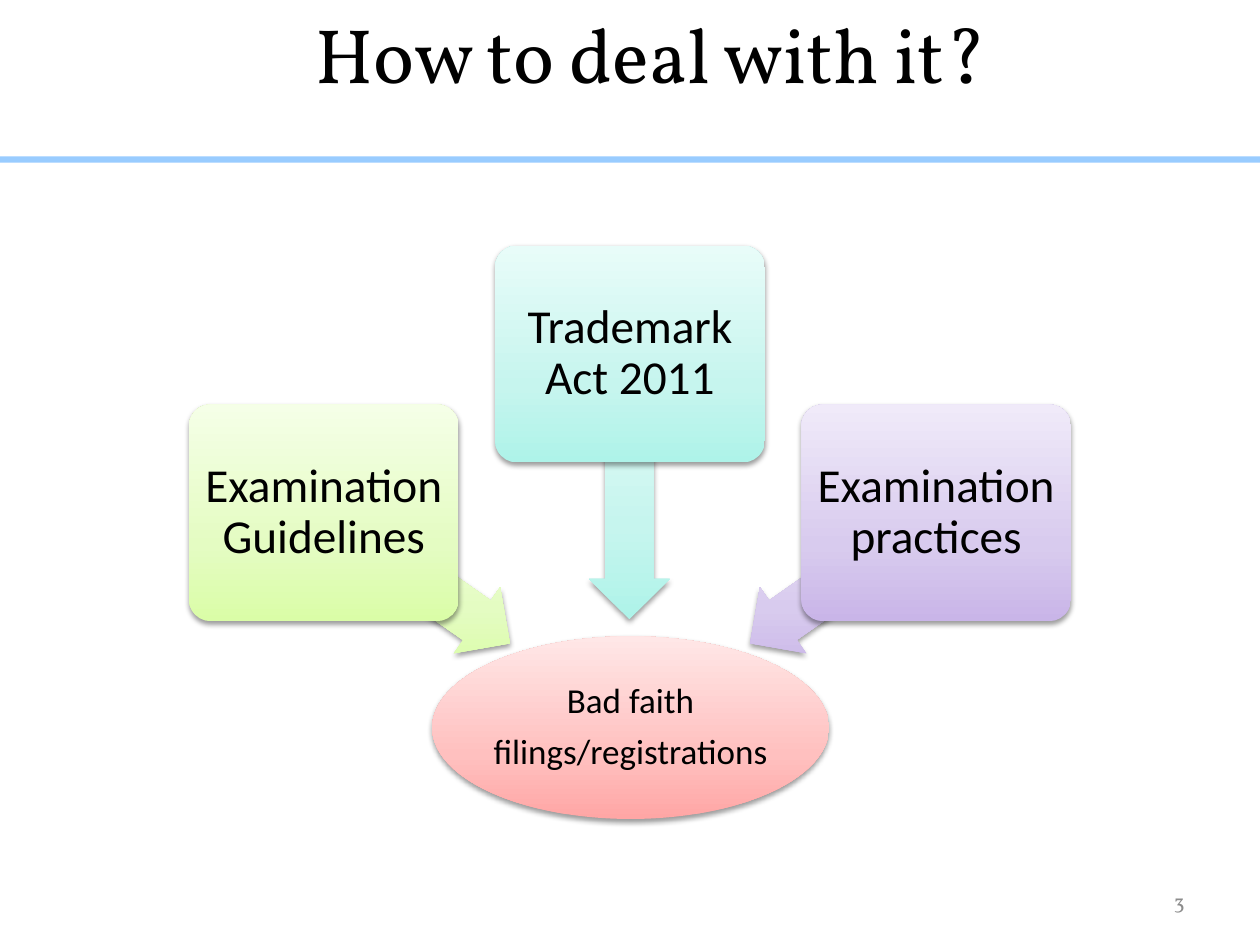
from dataclasses import dataclass

from lxml import etree
from pptx import Presentation
from pptx.dml.color import RGBColor
from pptx.enum.shapes import MSO_SHAPE
from pptx.enum.text import MSO_ANCHOR, PP_ALIGN
from pptx.oxml import parse_xml
from pptx.oxml.ns import nsdecls, qn
from pptx.util import Inches, Pt

RECTANGLE, OVAL = MSO_SHAPE.RECTANGLE, MSO_SHAPE.OVAL
ROUNDED, LEFT_ARROW = MSO_SHAPE.ROUNDED_RECTANGLE, MSO_SHAPE.LEFT_ARROW
TOP, MIDDLE = MSO_ANCHOR.TOP, MSO_ANCHOR.MIDDLE
CENTER, RIGHT = PP_ALIGN.CENTER, PP_ALIGN.RIGHT


@dataclass(frozen=True)
class Theme:
    text: str = "000000"
    muted: str = "8C8C8C"
    rule: str = "99CCFF"
    # Gradient colours run from bottom to top
    red: tuple = ("FFA6A5", "FFC0BF", "FFE7E7")
    green: tuple = ("DAFDA7", "E4FCC2", "F5FFE7")
    teal: tuple = ("AEF3E9", "C6F5EE", "E8FCF9")
    purple: tuple = ("C9B5E8", "D8CBEE", "F0EAF9")
    gradient_stops: tuple = (0, 35, 100)
    heading_font: str = "Vollkorn"
    body_font: str = "Calibri"
    title_size: int = 44
    box_size: int = 27
    target_size: int = 20
    number_size: int = 12


class SlideBuilder:
    def __init__(self, slide, theme):
        self.slide = slide
        self.theme = theme

    def fill_text(self, shape, lines, size, font, color, align=CENTER,
                  anchor=MIDDLE, inset=None, spacing=None):
        frame = shape.text_frame
        frame.word_wrap = True
        frame.vertical_anchor = anchor
        if inset is not None:
            for side in ("left", "top", "right", "bottom"):
                setattr(frame, f"margin_{side}", Inches(inset))
        paragraph_format = {"alignment": align, **(spacing or {})}
        font_format = {"name": font, "size": Pt(size)}
        for index, line in enumerate(lines):
            paragraph = frame.add_paragraph() if index else frame.paragraphs[0]
            for name, value in paragraph_format.items():
                setattr(paragraph, name, value)
            run = paragraph.add_run()
            run.text = line
            for name, value in font_format.items():
                setattr(run.font, name, value)
            run.font.color.rgb = RGBColor.from_string(color)

    def add_text(self, place, text, size, color, **options):
        box = self.slide.shapes.add_textbox(*map(Inches, place))
        self.fill_text(box, [text], size, self.theme.heading_font, color, **options)

    def add_rule(self, place):
        shape = self.slide.shapes.add_shape(RECTANGLE, *map(Inches, place))
        shape.shadow.inherit = False
        shape.fill.solid()
        shape.fill.fore_color.rgb = RGBColor.from_string(self.theme.rule)
        shape.line.fill.background()

    def add_gradient_shape(self, kind, place, colors, adjustments=(), rotation=0):
        shape = self.slide.shapes.add_shape(kind, *map(Inches, place))
        for index, value in enumerate(adjustments):
            shape.adjustments[index] = value
        shape.rotation = rotation
        shape.line.fill.background()
        stops = "".join(
            f'<a:gs pos="{stop * 1000}"><a:srgbClr val="{color}"/></a:gs>'
            for stop, color in zip(self.theme.gradient_stops, colors))
        properties = shape.element.spPr
        properties.find(qn("a:prstGeom")).addnext(parse_xml(
            f'<a:gradFill {nsdecls("a")} rotWithShape="0"><a:gsLst>{stops}</a:gsLst>'
            '<a:lin ang="16200000" scaled="0"/></a:gradFill>'))
        # Soft shadow straight below the shape
        shape.shadow.inherit = False
        shadow = etree.SubElement(
            properties.find(qn("a:effectLst")), qn("a:outerShdw"),
            blurRad=str(Pt(3.1)), dist=str(Pt(1.6)), dir="5400000", rotWithShape="0")
        color = etree.SubElement(shadow, qn("a:srgbClr"), val="000000")
        etree.SubElement(color, qn("a:alpha"), val="38000")
        return shape

    def add_label(self, shape, lines, size, inset):
        # Space after a paragraph is 35 % of its type size
        spacing = {"line_spacing": 0.9, "space_after": Pt(round(size * 0.35))}
        self.fill_text(shape, lines, size, self.theme.body_font, self.theme.text,
                       inset=inset, spacing=spacing)


def main():
    theme = Theme()
    presentation = Presentation()
    presentation.slide_width, presentation.slide_height = Inches(10), Inches(7.5)
    slide = presentation.slides.add_slide(presentation.slide_layouts[6])
    builder = SlideBuilder(slide, theme)

    # Header
    builder.add_rule((0, 1.24, 10, 0.05))
    builder.add_text((0.67, 0, 9, 1.25), "How to deal with it?",
                     theme.title_size, theme.text, anchor=TOP)

    # Target of the three measures
    target = builder.add_gradient_shape(OVAL, (3.43, 5.05, 3.15, 1.45), theme.red)
    builder.add_label(target, ["Bad faith", "filings/registrations"],
                      theme.target_size, 0.01)

    # Measures, each with its arrow behind the box
    box_width, box_height, arrow_height = 2.14, 1.72, 0.64
    first_left, step = 1.5, 2.43
    measures = [
        ("Examination Guidelines", theme.green, 3.21, (2.41, 4.27, 1.8), 215),
        ("Trademark Act 2011", theme.teal, 1.95, (3.94, 3.54, 2.11), 270),
        ("Examination practices", theme.purple, 3.21, (5.79, 4.27, 1.8), 325),
    ]
    for index, (text, colors, top, arrow, rotation) in enumerate(measures):
        builder.add_gradient_shape(LEFT_ARROW, (*arrow, arrow_height), colors,
                                   (0.6, 0.5), rotation)
        place = (first_left + index * step, top, box_width, box_height)
        box = builder.add_gradient_shape(ROUNDED, place, colors, (0.1,))
        builder.add_label(box, [text], theme.box_size, 0.06)

    # Slide number
    builder.add_text((7.17, 6.95, 2.33, 0.4), "3", theme.number_size,
                     theme.muted, align=RIGHT)

    presentation.save("out.pptx")


if __name__ == "__main__":
    main()
